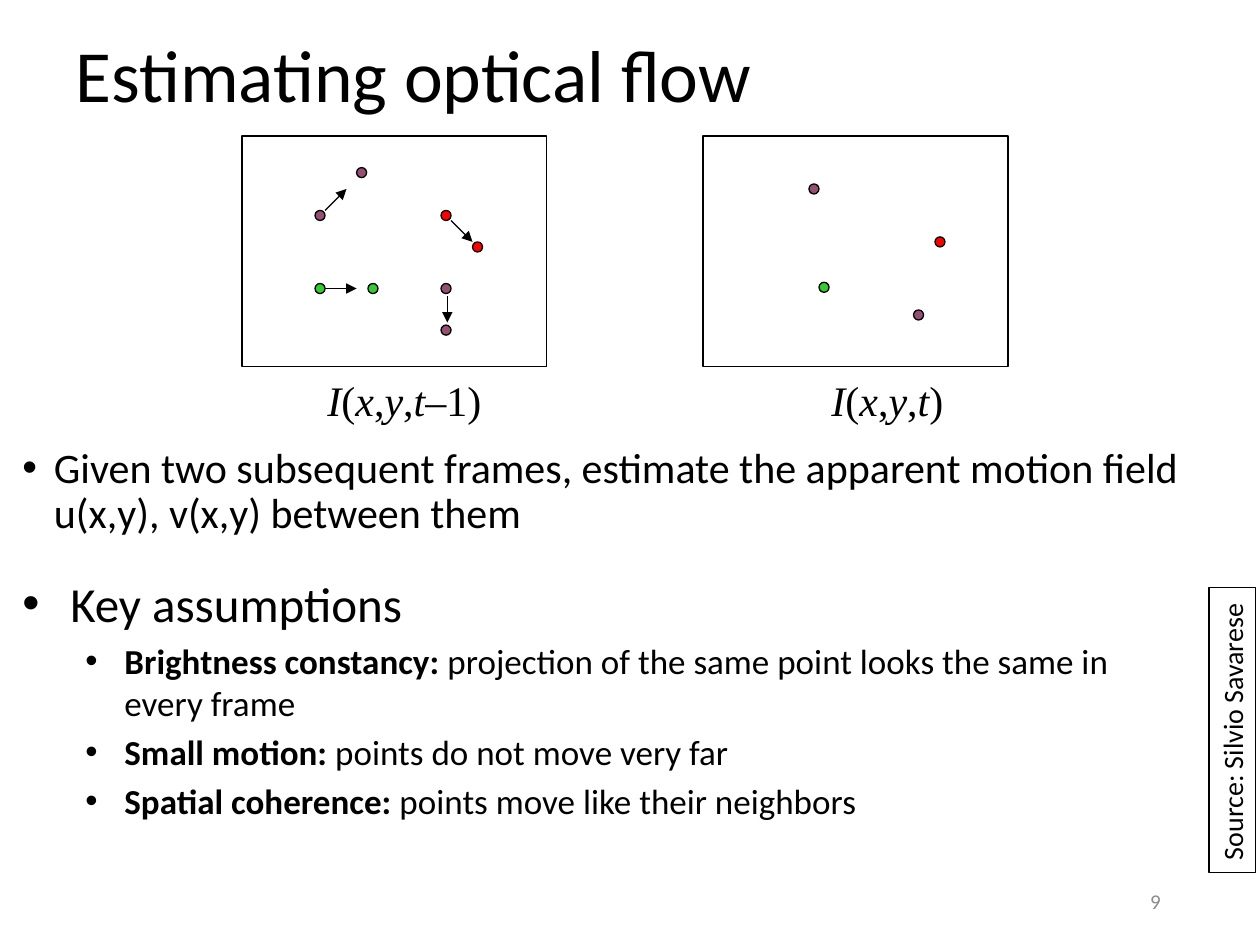
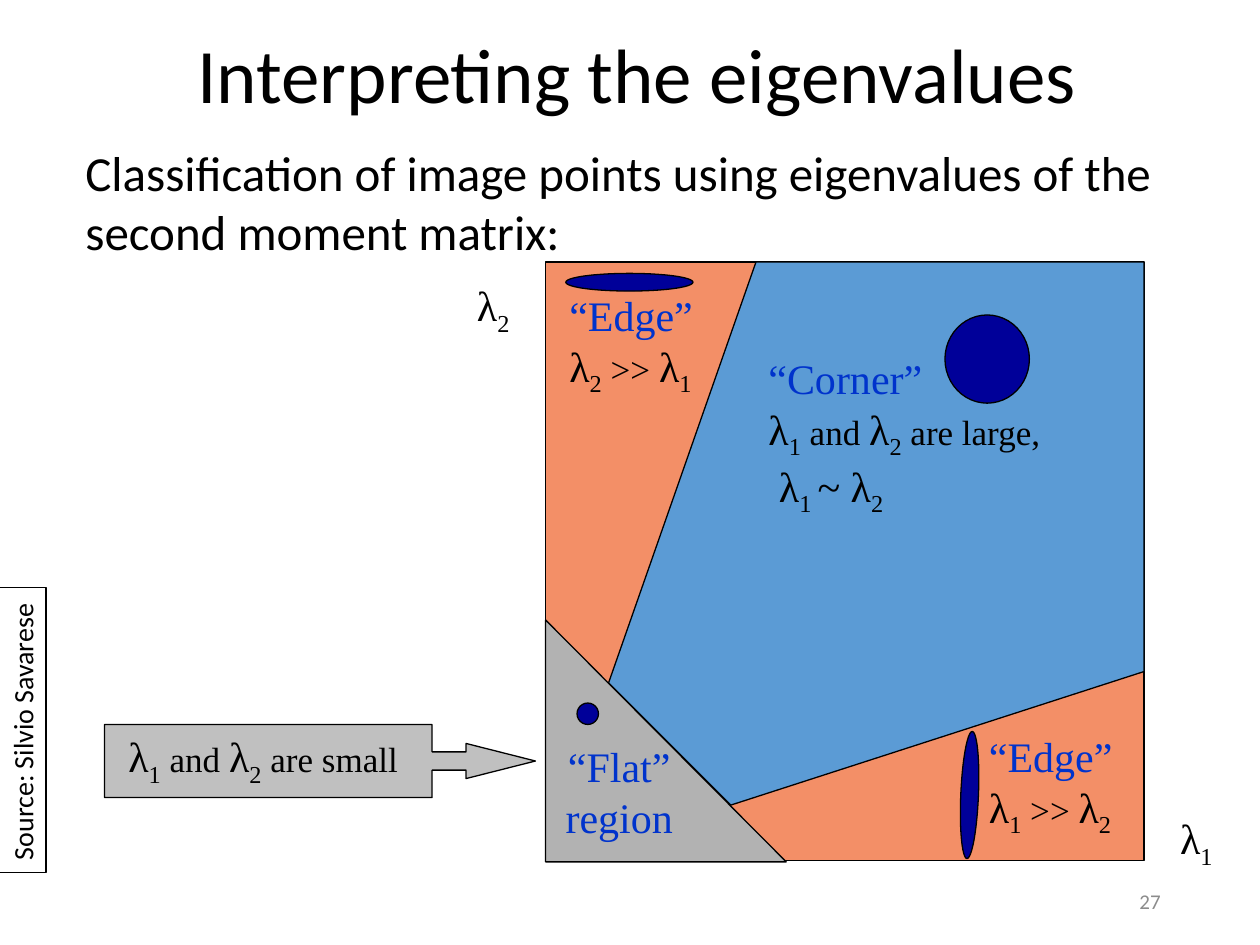
from lxml import etree
from pptx import Presentation
from pptx.dml import color as dml
from pptx.enum import shapes, text
from pptx.oxml import ns
from pptx.util import Inches, Pt

COLORS = {
    "black": "000000", "white": "FFFFFF", "number": "8C8C8C",
    "purple": "954F72", "red": "FF0000", "green": "33CC33",
    "edge": "F38F67", "corner": "5B9BD5", "flat": "B2B2B2",
    "callout": "C0C0C0", "label": "0033CC", "ellipse": "000099",
}
SANS = {"name": "Calibri"}
MATH = {"name": "Times New Roman", "size": Pt(24)}
ITALIC = {"italic": True}
BOLD = {"bold": True}
SMALL = {"size": Pt(20)}
LABEL = {"color": "label"}
SUBSCRIPT = {"baseline": "-25000"}
MIDDLE = {"vertical_anchor": text.MSO_ANCHOR.MIDDLE}
FIT = {"word_wrap": False, "auto_size": text.MSO_AUTO_SIZE.SHAPE_TO_FIT_TEXT}
CENTER = {"alignment": text.PP_ALIGN.CENTER}
RIGHT = {"alignment": text.PP_ALIGN.RIGHT}
OVAL = shapes.MSO_SHAPE.OVAL
RECTANGLE = shapes.MSO_SHAPE.RECTANGLE


def rgb(name):
    return dml.RGBColor.from_string(COLORS[name])


def apply(target, values):
    for name, value in values.items():
        setattr(target, name, value)


def eigenvalue(index):
    return [("λ", {}), (str(index), SUBSCRIPT)]


def comparison(larger, smaller):
    return eigenvalue(larger) + [(" >> ", SMALL)] + eigenvalue(smaller)


def both_eigenvalues(ending):
    return eigenvalue(1) + [(" and ", SMALL)] + eigenvalue(2) + [(ending, SMALL)]


def image_function(time):
    parts = ["I", "(", "x", ",", "y", ",", "t", time]
    return [(part, ITALIC if part.isalpha() else {}) for part in parts]


class Deck:
    def __init__(self):
        self.presentation = Presentation()
        apply(self.presentation, {"slide_width": Inches(10), "slide_height": Inches(7.5)})
        self.slide = None

    def new_slide(self, number, source_left):
        self.slide = self.presentation.slides.add_slide(self.presentation.slide_layouts[6])
        self.text((7.06, 6.95, 2.25, 0.4), [str(number)],
                  {**SANS, "size": Pt(12), "color": "number"}, RIGHT, MIDDLE)
        source = self.text((source_left, 5.61, 2.26, 0.37), ["Source: Silvio Savarese"],
                           {**SANS, "size": Pt(16)}, frame=FIT)
        source.rotation = 270
        self.outline(source)

    def title(self, box, words, size):
        self.text(box, [words], {**SANS, "size": Pt(size)}, {"line_spacing": 0.9}, MIDDLE)

    def outline(self, shape):
        shape.line.color.rgb = rgb("black")
        shape.line.width = Pt(0.75)

    def paint(self, shape, fill):
        shape.shadow.inherit = False
        shape.fill.solid()
        shape.fill.fore_color.rgb = rgb(fill)
        self.outline(shape)
        return shape

    def shape(self, kind, box, fill, rotation=0):
        shape = self.slide.shapes.add_shape(kind, *map(Inches, box))
        shape.rotation = rotation
        return self.paint(shape, fill)

    def polygon(self, points, fill):
        corners = [tuple(map(Inches, point)) for point in points]
        builder = self.slide.shapes.build_freeform(*corners[0], scale=1.0)
        builder.add_line_segments(corners[1:], close=True)
        return self.paint(builder.convert_to_shape(), fill)

    def dot(self, left, top, fill):
        self.shape(OVAL, (left, top, 0.08, 0.08), fill)

    def arrow(self, *ends):
        connector = self.slide.shapes.add_connector(
            shapes.MSO_CONNECTOR.STRAIGHT, *map(Inches, ends))
        self.outline(connector)
        line = connector.line._get_or_add_ln()
        etree.SubElement(line, ns.qn("a:tailEnd"), type="triangle")
        etree.SubElement(connector._element.spPr, ns.qn("a:effectLst"))

    def run(self, paragraph, words, values):
        run = paragraph.add_run()
        run.text = words
        values = {"color": "black", **values}
        run.font.color.rgb = rgb(values.pop("color"))
        baseline = values.pop("baseline", None)
        if baseline:
            run._r.get_or_add_rPr().set("baseline", baseline)
        apply(run.font, values)

    def bullet(self, paragraph, indent, hanging):
        properties = paragraph._p.get_or_add_pPr()
        properties.set("marL", str(Inches(indent)))
        properties.set("indent", str(-Inches(hanging)))
        etree.SubElement(properties, ns.qn("a:buFont"), typeface="Arial")
        etree.SubElement(properties, ns.qn("a:buChar"), char="•")

    def text(self, box, paragraphs, font, layout=None, frame=None, bullets=()):
        shape = self.slide.shapes.add_textbox(*map(Inches, box))
        apply(shape.text_frame, {"word_wrap": True, **(frame or {})})
        for index, runs in enumerate(paragraphs):
            paragraph = shape.text_frame.add_paragraph() if index else shape.text_frame.paragraphs[0]
            if bullets:
                self.bullet(paragraph, *bullets[min(index, len(bullets) - 1)])
            apply(paragraph, layout or {})
            if index and bullets:
                paragraph.space_before = Pt(4)
            for words, values in [(runs, {})] if isinstance(runs, str) else runs:
                self.run(paragraph, words, {**font, **values})
        return shape


def optical_flow(deck):
    deck.new_slide(9, 8.65)
    deck.title((0.5, 0, 9, 1.25), "Estimating optical flow", 42)
    frames = [
        (1.92, 2.5, "–1)", [
            (2.5, 1.67, "purple"), (2.83, 1.33, "purple"),
            (3.5, 1.67, "red"), (3.75, 1.92, "red"),
            (2.5, 2.25, "green"), (2.92, 2.25, "green"),
            (3.5, 2.25, "purple"), (3.5, 2.58, "purple")]),
        (5.58, 6.5, ")", [
            (6.42, 1.46, "purple"), (7.42, 1.88, "red"),
            (6.5, 2.24, "green"), (7.25, 2.46, "purple")]),
    ]
    for left, caption_left, time, dots in frames:
        deck.shape(RECTANGLE, (left, 1.08, 2.42, 1.83), "white")
        for dot in dots:
            deck.dot(*dot)
        deck.text((caption_left, 2.92, 1.42, 0.5), [image_function(time)], MATH, frame=FIT)
    for ends in [(2.58, 1.67, 2.75, 1.5), (2.58, 2.29, 2.83, 2.29),
                 (3.58, 1.75, 3.75, 1.92), (3.55, 2.35, 3.55, 2.56)]:
        deck.arrow(*ends)

    deck.text((0.08, 3.5, 9.75, 1.08),
              ["Given two subsequent frames, estimate the apparent motion field "
               "u(x,y), v(x,y) between them"],
              {**SANS, "size": Pt(24)}, {"line_spacing": 0.9}, bullets=[(0.25, 0.25)])
    assumptions = [
        ("Brightness constancy:", " projection of the same point looks the same in every frame"),
        ("Small motion:", " points do not move very far"),
        ("Spatial coherence:", " points move like their neighbors"),
    ]
    deck.text((0.08, 4.5, 9, 2.42),
              [[("Key assumptions", {"size": Pt(28)})]]
              + [[(name, BOLD), (meaning, {})] for name, meaning in assumptions],
              {**SANS, **SMALL}, bullets=[(0.38, 0.38), (0.81, 0.31)])


def eigenvalues(deck):
    deck.new_slide(27, -0.95)
    deck.title((1.47, 0, 8.03, 1.25), "Interpreting the eigenvalues", 44)
    deck.text((0.58, 1.08, 8.75, 1.03),
              ["Classification of image points using eigenvalues of the second moment matrix:"],
              {**SANS, "size": Pt(28)})

    callout = deck.shape(shapes.MSO_SHAPE.RIGHT_ARROW_CALLOUT, (0.83, 5.75, 3.42, 0.58), "callout")
    for index, value in enumerate([0.25, 0.24, 0.95, 0.76]):
        callout.adjustments[index] = value
    deck.text((0.92, 5.75, 2.58, 0.5), [both_eigenvalues(" are small")], MATH)

    deck.shape(RECTANGLE, (4.33, 2.08, 4.75, 4.75), "edge")
    deck.polygon([(4.83, 5.42), (6, 2.08), (9.08, 2.08), (9.08, 5.33), (5.8, 6.39)], "corner")
    deck.shape(shapes.MSO_SHAPE.RIGHT_TRIANGLE, (4.33, 4.92, 1.91, 1.92), "flat")

    for box, index in [((9.08, 6.4, 0.83, 0.5), 1), ((3.33, 2.17, 1.17, 0.5), 2)]:
        deck.text(box, [eigenvalue(index)], MATH, CENTER)
    for left, top, larger, smaller in [(7.75, 5.75, 1, 2), (4.42, 2.25, 2, 1)]:
        deck.text((left, top, 1.42, 0.9),
                  [[("“Edge”", LABEL)], comparison(larger, smaller)], MATH)
    similar = [(" ", {}), ("λ", {}), ("1 ", SUBSCRIPT), ("~ ", {})] + eigenvalue(2)
    deck.text((6, 2.75, 2.92, 1.3),
              [[("“Corner”", LABEL)], both_eigenvalues(" are large,"), similar], MATH)
    deck.text((4.25, 5.83, 1.33, 0.9), ["“Flat” region"], {**MATH, **LABEL}, CENTER)

    for box, rotation in [((7.5, 2.5, 0.67, 0.7), 0), ((4.49, 2.17, 1.01, 0.14), 0),
                          ((4.58, 5.58, 0.17, 0.17), 0), ((7.19, 6.24, 1.01, 0.14), 92.4)]:
        deck.shape(OVAL, box, "ellipse", rotation)


def main():
    deck = Deck()
    optical_flow(deck)
    eigenvalues(deck)
    deck.presentation.save("out.pptx")


if __name__ == "__main__":
    main()
